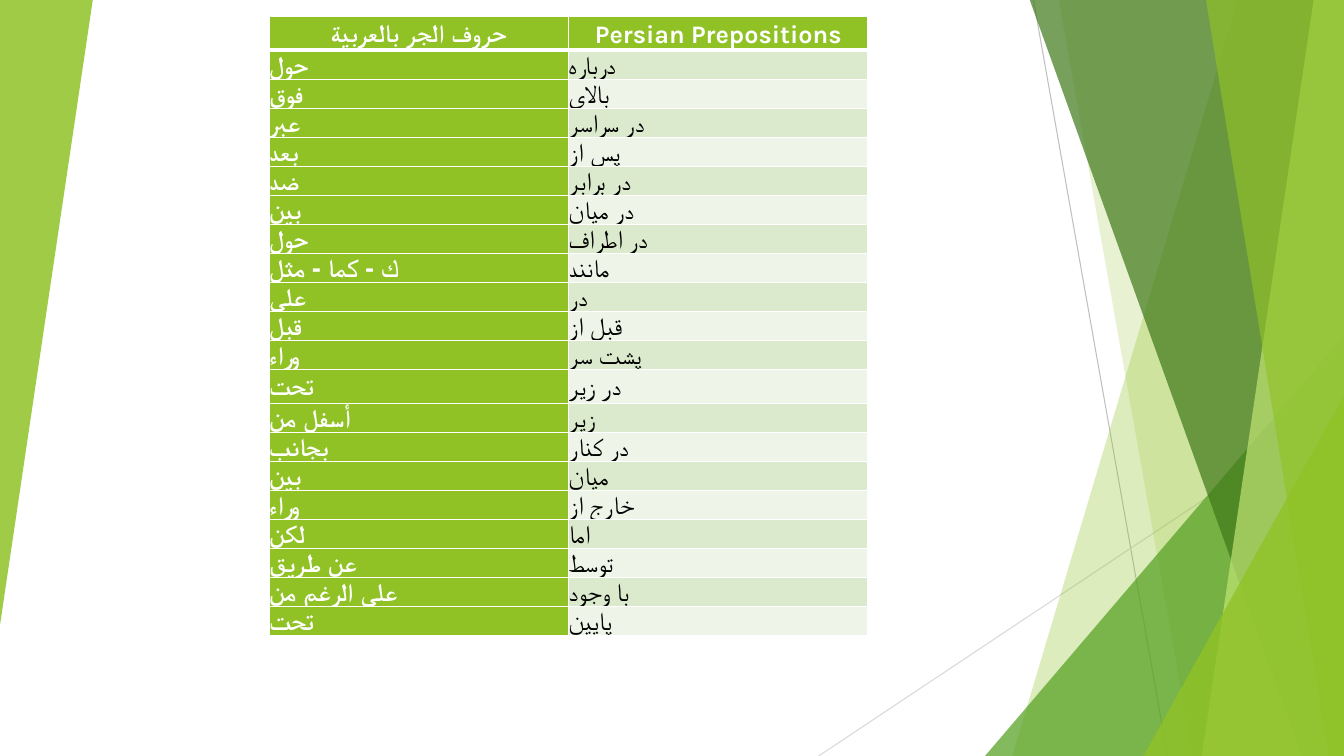
from lxml.etree import SubElement
from pptx import Presentation
from pptx.dml.color import RGBColor
from pptx.enum.shapes import MSO_CONNECTOR, MSO_SHAPE
from pptx.enum.text import MSO_ANCHOR, PP_ALIGN
from pptx.oxml.ns import qn
from pptx.util import Inches, Pt

COLORS = {
    "lime": "90C226", "green": "54A021", "forest": "3F7819", "pale": "C0E474",
    "band": "DBE9CD", "light": "EEF4E8", "white": "FFFFFF", "black": "000000",
    "gray": "BFBFBF", "silver": "D9D9D9",
}
WIDTH, HEIGHT = 13.33, 7.5
PREPOSITIONS = [
    ("حروف الجر بالعربية", "Persian Prepositions"),
    ("حول", "درباره"),
    ("فوق", "بالای"),
    ("عبر", "در سراسر"),
    ("بعد", "پس از"),
    ("ضد", "در برابر"),
    ("بين", "در میان"),
    ("حول", "در اطراف"),
    ("ك - كما - مثل", "مانند"),
    ("على", "در"),
    ("قبل", "قبل از"),
    ("وراء", "پشت سر"),
    ("تحت", "در زیر"),
    ("أسفل من", "زیر"),
    ("بجانب", "در کنار"),
    ("بين", "میان"),
    ("وراء", "خارج از"),
    ("لكن", "اما"),
    ("عن طريق", "توسط"),
    ("على الرغم من", "با وجود"),
    ("تحت", "پایین"),
]
TALL_ROW = 12


def paint(shape, color, opacity):
    """Fill a facet with a partly transparent colour, without outline or shadow."""
    shape.shadow.inherit = False
    shape.line.fill.background()
    shape.fill.solid()
    shape.fill.fore_color.rgb = RGBColor.from_string(COLORS[color])
    tint = shape.fill._xPr.find(qn("a:solidFill"))[0]
    SubElement(tint, qn("a:alpha"), val=str(opacity * 1000))


def add_border(cell, side, points):
    border = SubElement(cell._tc.get_or_add_tcPr(), qn(f"a:{side}"), w=str(Pt(points)))
    fill = SubElement(border, qn("a:solidFill"))
    SubElement(fill, qn("a:srgbClr"), val=COLORS["white"])


deck = Presentation()
deck.slide_width, deck.slide_height = Inches(WIDTH), Inches(HEIGHT)
page = deck.slides.add_slide(deck.slide_layouts[6])

# Thin lines behind the facets
for start_x, start_y, end_x, color in [(10.25, 0, 11.58, "gray"), (WIDTH, 4.03, 8.12, "silver")]:
    line = page.shapes.add_connector(
        MSO_CONNECTOR.STRAIGHT, Inches(start_x), Inches(start_y), Inches(end_x), Inches(HEIGHT))
    line.line.color.rgb = RGBColor.from_string(COLORS[color])
    line.line.width = Pt(0.75)
    SubElement(line._element.spPr, qn("a:effectLst"))

# Facets: a panel has its top and bottom left x, a triangle its box and rotation
FACETS = [
    ((12.28, 10.04), "lime", 30),
    ((10.5, 11.83), "lime", 20),
    ((9.77, 3.33, 3.56, 4.17, 0), "green", 72),
    ((10.21, 12.91), "forest", 70),
    ((13.03, 11.92), "pale", 70),
    ((11.96, 13.18), "lime", 65),
    ((11.34, 3.93, 1.99, 3.57, 0), "lime", 80),
    ((0, 0, 0.92, 6.2, 180), "lime", 85),
]
for geometry, color, opacity in FACETS:
    if len(geometry) == 2:
        top_x, bottom_x = geometry
        outline = page.shapes.build_freeform(Inches(top_x), Inches(-0.01))
        corners = [(WIDTH, -0.01), (WIDTH, HEIGHT), (bottom_x, HEIGHT)]
        outline.add_line_segments([(Inches(x), Inches(y)) for x, y in corners], close=True)
        facet = outline.convert_to_shape()
    else:
        *box, rotation = geometry
        facet = page.shapes.add_shape(MSO_SHAPE.ISOSCELES_TRIANGLE, *map(Inches, box))
        facet.adjustments[0] = 1
        facet.rotation = rotation
    paint(facet, color, opacity)

# Table of prepositions
frame = page.shapes.add_table(
    len(PREPOSITIONS), 2, Inches(2.67), Inches(0.16), Inches(5.93), Inches(7.34))
table = frame.table
for column in table.columns:
    column.width = Inches(2.97)
for index, row in enumerate(table.rows):
    row.height = Inches(0.34 if index == TALL_ROW else 0.08)
frame.height = Inches(7.34)

for row, words in enumerate(PREPOSITIONS):
    for column, word in enumerate(words):
        cell = table.cell(row, column)
        strong = row == 0 or column == 0
        for side in ("lnL", "lnR", "lnT", "lnB"):
            under_header = (row, side) in [(0, "lnB"), (1, "lnT")]
            add_border(cell, side, 3 if under_header else 1)
        cell.fill.solid()
        shade = "lime" if strong else "band" if row % 2 else "light"
        cell.fill.fore_color.rgb = RGBColor.from_string(COLORS[shade])
        cell.vertical_anchor = MSO_ANCHOR.MIDDLE
        for margin in ("left", "right", "top", "bottom"):
            setattr(cell, f"margin_{margin}", 0)
        para = cell.text_frame.paragraphs[0]
        para.alignment = PP_ALIGN.LEFT if row else PP_ALIGN.CENTER
        para.line_spacing = 1.15
        span = para.add_run()
        span.text = word
        for name, value in {"name": "Karla", "size": Pt(18), "bold": strong}.items():
            setattr(span.font, name, value)
        span.font.color.rgb = RGBColor.from_string(COLORS["white" if strong else "black"])

deck.save("out.pptx")
